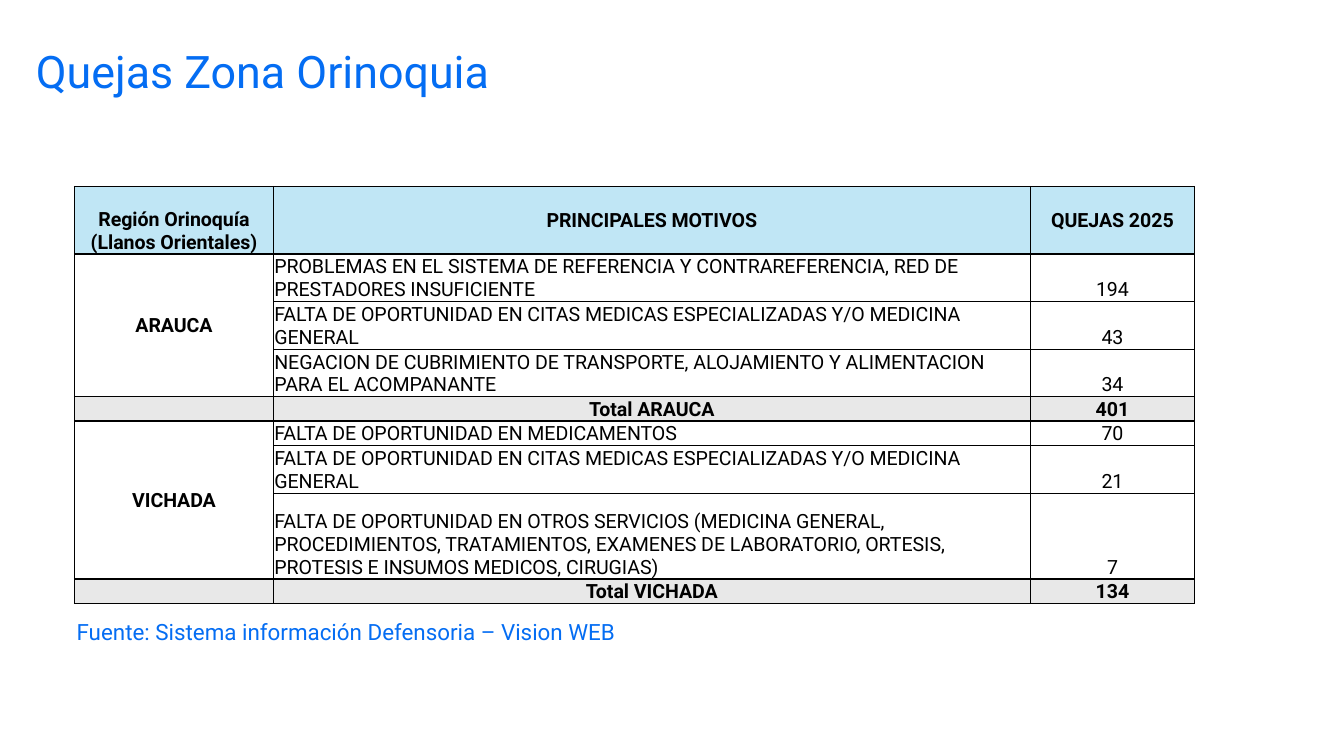
from lxml import etree
from pptx import Presentation
from pptx.dml.color import RGBColor
from pptx.enum.text import MSO_ANCHOR, PP_ALIGN
from pptx.oxml.ns import qn
from pptx.util import Pt

PX = 6350
LEFT, CENTER = PP_ALIGN.LEFT, PP_ALIGN.CENTER
TOP, MIDDLE, BOTTOM = MSO_ANCHOR.TOP, MSO_ANCHOR.MIDDLE, MSO_ANCHOR.BOTTOM
FONT = "Roboto"
COLORS = {
    "blue": "046DF3",
    "black": "000000",
    "header": "C0E6F5",
    "total": "E8E8E8",
}
COL_WIDTHS = [213, 811, 176]
ROWS = [
    (72, "header", "Región Orinoquía (Llanos Orientales)", "PRINCIPALES MOTIVOS", "QUEJAS 2025"),
    (51, "body", "ARAUCA", "PROBLEMAS EN EL SISTEMA DE REFERENCIA Y CONTRAREFERENCIA, RED DE PRESTADORES INSUFICIENTE", "194"),
    (51, "body", "", "FALTA DE OPORTUNIDAD EN CITAS MEDICAS ESPECIALIZADAS Y/O MEDICINA GENERAL", "43"),
    (51, "body", "", "NEGACION DE CUBRIMIENTO DE TRANSPORTE, ALOJAMIENTO Y ALIMENTACION PARA EL ACOMPANANTE", "34"),
    (26, "total", "", "Total ARAUCA", "401"),
    (26, "body", "VICHADA", "FALTA DE OPORTUNIDAD EN MEDICAMENTOS", "70"),
    (51, "body", "", "FALTA DE OPORTUNIDAD EN CITAS MEDICAS ESPECIALIZADAS Y/O MEDICINA GENERAL", "21"),
    (92, "body", "", "FALTA DE OPORTUNIDAD EN OTROS SERVICIOS (MEDICINA GENERAL, PROCEDIMIENTOS, TRATAMIENTOS, EXAMENES DE LABORATORIO, ORTESIS, PROTESIS E INSUMOS MEDICOS, CIRUGIAS)", "7"),
    (26, "total", "", "Total VICHADA", "134"),
]
MERGED_ROWS = [(1, 3), (5, 7)]


def write(p, text, size, color, bold=False, align=LEFT):
    p.alignment = align
    r = p.add_run()
    r.text = text
    r.font.name = FONT
    r.font.size = Pt(size)
    r.font.bold = bold
    r.font.color.rgb = RGBColor.from_string(COLORS[color])


def border(cell, side, width):
    ln = etree.SubElement(cell._tc.get_or_add_tcPr(), qn(f"a:ln{side}"), w=str(Pt(width)))
    fill = etree.SubElement(ln, qn("a:solidFill"))
    etree.SubElement(fill, qn("a:srgbClr"), val=COLORS["black"])


prs = Presentation()
prs.slide_width, prs.slide_height = 1440 * PX, 810 * PX
s = prs.slides.add_slide(prs.slide_layouts[5])

title = s.shapes.title
title.left, title.top, title.width, title.height = 24 * PX, 40 * PX, 1385 * PX, 72 * PX
title.text_frame.vertical_anchor = TOP
write(title.text_frame.paragraphs[0], "Quejas Zona Orinoquia", 24, "blue")

height = sum(row[0] for row in ROWS)
frame = s.shapes.add_table(len(ROWS), len(COL_WIDTHS), 80 * PX, 200 * PX,
                           sum(COL_WIDTHS) * PX, height * PX)
table = frame.table
table.first_row = False
table.horz_banding = False
for column, width in zip(table.columns, COL_WIDTHS):
    column.width = width * PX

for i, (row_height, kind, *texts) in enumerate(ROWS):
    table.rows[i].height = row_height * PX
    starts_group = i == 0 or ROWS[i - 1][1] != kind
    ends_group = i == len(ROWS) - 1 or ROWS[i + 1][1] != kind
    for j, text in enumerate(texts):
        cell = table.cell(i, j)
        cell.margin_left = cell.margin_right = cell.margin_top = PX
        cell.margin_bottom = 0
        in_middle = (j > 0) if kind == "header" else (j == 0 and kind == "body")
        cell.vertical_anchor = MIDDLE if in_middle else BOTTOM
        border(cell, "L", 1 if j == 0 else 0.5)
        border(cell, "R", 0.5)
        border(cell, "T", 1 if starts_group else 0.5)
        border(cell, "B", 1 if ends_group or (j == 0 and text) else 0.5)
        if kind == "body":
            cell.fill.background()
        else:
            cell.fill.solid()
            cell.fill.fore_color.rgb = RGBColor.from_string(COLORS[kind])
        p = cell.text_frame.paragraphs[0]
        if text:
            write(p, text, 10.5, "black", bold=kind != "body" or j == 0,
                  align=LEFT if kind == "body" and j == 1 else CENTER)
        else:
            etree.SubElement(p._p, qn("a:endParaRPr"), sz="1050")

for first, last in MERGED_ROWS:
    table.cell(first, 0).merge(table.cell(last, 0))

source = s.shapes.add_textbox(68 * PX, 655 * PX, 720 * PX, 43 * PX)
source.text_frame.word_wrap = True
write(source.text_frame.paragraphs[0],
      "Fuente: Sistema información Defensoria – Vision WEB", 12, "blue")

prs.save("out.pptx")
